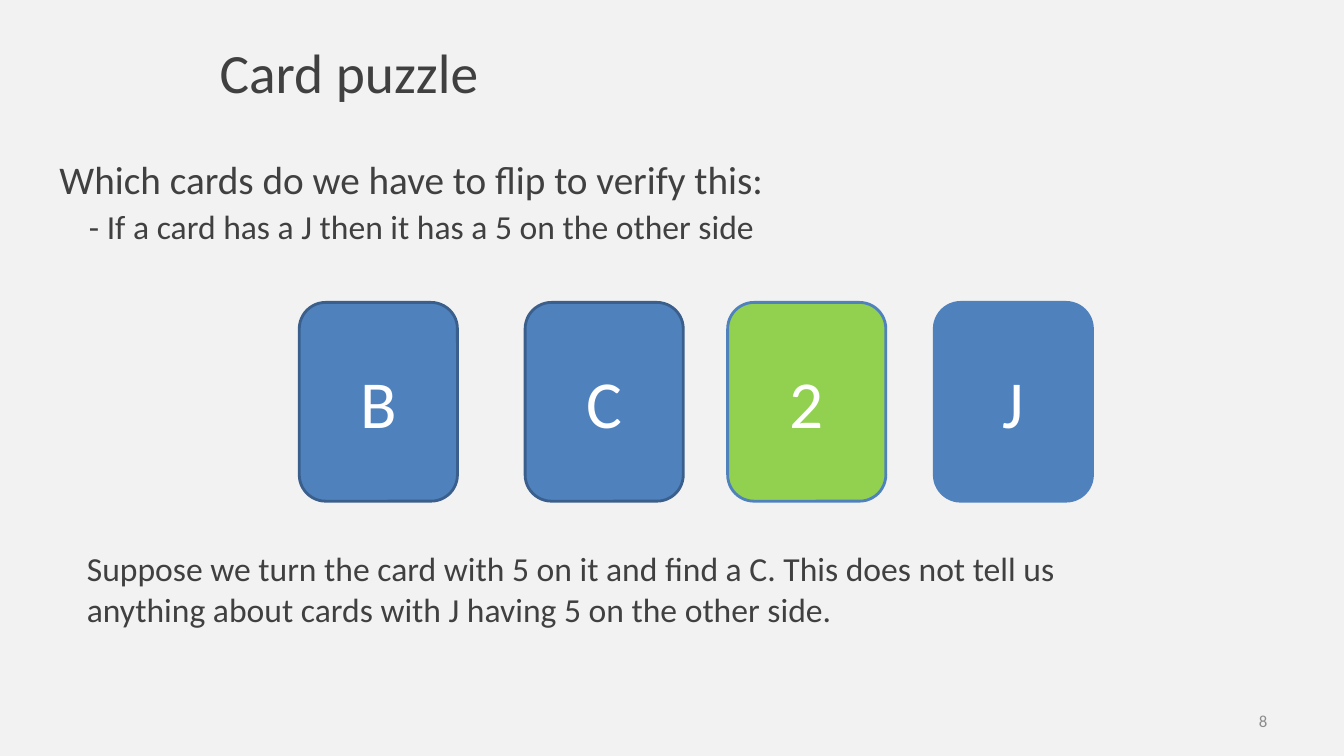
from pptx import Presentation
from pptx.dml.color import RGBColor
from pptx.enum.shapes import MSO_SHAPE
from pptx.enum.text import MSO_ANCHOR, MSO_AUTO_SIZE, PP_ALIGN
from pptx.util import Pt

FONT = "Calibri"
INK = "404040"
BLUE = "4F81BD"
DARK_BLUE = "3A5F8C"
GREEN = "92D050"
SUB_INDENT = 21

# Letter, left offset in the row, fill, outline
CARDS = [
    ("B", 0, BLUE, DARK_BLUE),
    ("C", 161.3, BLUE, DARK_BLUE),
    ("2", 306, GREEN, BLUE),
    ("J", 453.6, BLUE, BLUE),
]
CARD_WIDTH = 113


def color(hex_string):
    return RGBColor.from_string(hex_string)


def write(paragraph, text, size, ink=INK, align=PP_ALIGN.LEFT, indent=0,
          before=0, line_spacing=1.0):
    run = paragraph.add_run()
    run.text = text
    run.font.name = FONT
    run.font.size = Pt(size)
    run.font.color.rgb = color(ink)
    paragraph.alignment = align
    paragraph.space_before = Pt(before)
    paragraph.line_spacing = line_spacing
    if indent:
        properties = paragraph._p.get_or_add_pPr()
        properties.set("marL", str(Pt(indent)))
        properties.set("indent", "0")


def add_text_frame(slide, left, top, width, height):
    text_box = slide.shapes.add_textbox(Pt(left), Pt(top), Pt(width), Pt(height))
    text_box.text_frame.word_wrap = True
    return text_box.text_frame


def place_title(slide, left, top, width, height):
    title = slide.shapes.title
    title.left, title.top = Pt(left), Pt(top)
    title.width, title.height = Pt(width), Pt(height)
    frame = title.text_frame
    frame.auto_size = MSO_AUTO_SIZE.NONE
    frame.vertical_anchor = MSO_ANCHOR.MIDDLE
    write(frame.paragraphs[0], "Card puzzle", 39.6, align=PP_ALIGN.CENTER)


def add_question(slide, left, top, width, height):
    frame = add_text_frame(slide, left, top, width, height)
    frame.margin_left = frame.margin_right = 0
    frame.margin_top = frame.margin_bottom = 0
    write(frame.paragraphs[0], "Which cards do we have to flip to verify this:",
          28, before=10, line_spacing=0.9)
    write(frame.add_paragraph(),
          "- If a card has a J then it has a 5 on the other side",
          24, indent=SUB_INDENT, before=5, line_spacing=0.9)


def add_cards(slide, left, top, height):
    for letter, offset, fill, outline in CARDS:
        card = slide.shapes.add_shape(
            MSO_SHAPE.ROUNDED_RECTANGLE,
            Pt(left + offset), Pt(top), Pt(CARD_WIDTH), Pt(height))
        card.shadow.inherit = False
        card.fill.solid()
        card.fill.fore_color.rgb = color(fill)
        card.line.color.rgb = color(outline)
        card.line.width = Pt(2)
        card.text_frame.vertical_anchor = MSO_ANCHOR.MIDDLE
        write(card.text_frame.paragraphs[0], letter, 48, ink="FFFFFF",
              align=PP_ALIGN.CENTER)


def add_explanation(slide, left, top, width, height):
    frame = add_text_frame(slide, left, top, width, height)
    write(frame.paragraphs[0],
          "Suppose we turn the card with 5 on it and find a C. This does not "
          "tell us anything about cards with J having 5 on the other side.",
          24, indent=SUB_INDENT, before=4.8)


def add_page_number(slide, left, top, width, height):
    frame = add_text_frame(slide, left, top, width, height)
    frame.vertical_anchor = MSO_ANCHOR.MIDDLE
    write(frame.paragraphs[0], "8", 12, ink="8C8C8C", align=PP_ALIGN.RIGHT)


def main():
    presentation = Presentation()
    presentation.slide_width, presentation.slide_height = Pt(960), Pt(540)

    # Title-only slide on light grey
    slide = presentation.slides.add_slide(presentation.slide_layouts[5])
    slide.background.fill.solid()
    slide.background.fill.fore_color.rgb = color("F2F2F2")

    # Regions from top to bottom
    place_title(slide, 34, 34, 430.5, 34)
    add_question(slide, 42.5, 115, 807, 73)
    add_cards(slide, 213.8, 216, 142)
    add_explanation(slide, 34, 388, 792, 106.5)
    add_page_number(slide, 688.3, 500.4, 224, 28.8)

    presentation.save("out.pptx")


if __name__ == "__main__":
    main()
